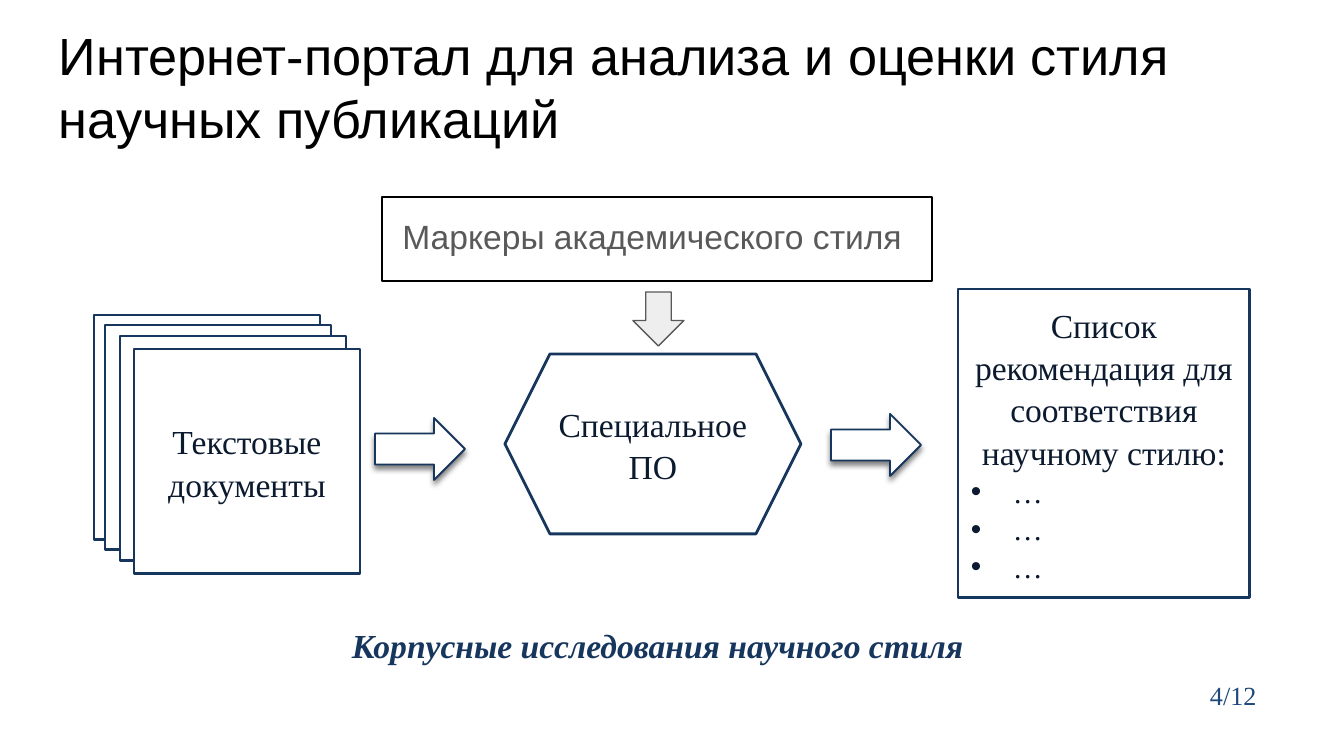
"""Build the slide about a portal that rates the style of research papers."""
import dataclasses

import lxml.etree
import pptx
import pptx.dml.color
import pptx.enum.shapes
import pptx.enum.text
import pptx.oxml.ns
import pptx.util

SCALE = 914400 / 134.4
KIND = pptx.enum.shapes.MSO_SHAPE
ALIGN = pptx.enum.text.PP_ALIGN
ANCHOR = pptx.enum.text.MSO_ANCHOR


@dataclasses.dataclass(frozen=True)
class Theme:
    sans: str = "Arial"
    serif: str = "Times New Roman"
    black: str = "000000"
    white: str = "FFFFFF"
    navy: str = "17365D"
    blue: str = "1F497D"
    ink: str = "0B1A2E"
    gray: str = "595959"
    pale: str = "EEEEEE"
    head: int = 28
    body: int = 18
    item: int = 16
    note: int = 14


THEME = Theme()


def px(*sizes):
    return [pptx.util.Emu(round(size * SCALE)) for size in sizes]


def paint(color, code):
    color.rgb = pptx.dml.color.RGBColor.from_string(code)


def add_node(parent, tag, **attrs):
    return lxml.etree.SubElement(parent, pptx.oxml.ns.qn(tag), attrs)


def set_frame(frame, anchor, inset):
    frame.word_wrap = True
    frame.auto_size = pptx.enum.text.MSO_AUTO_SIZE.NONE
    frame.vertical_anchor = anchor
    frame.margin_left, frame.margin_right = px(13, 13)
    frame.margin_top, frame.margin_bottom = px(inset, inset)


def write(frame, lines, size, face, code, align=ALIGN.LEFT, space=None, bold=None):
    """Add each line as a paragraph, filling an empty first one."""
    paras = []
    for line in lines:
        first = frame.paragraphs[0]
        para = frame.add_paragraph() if first.runs else first
        para.alignment = align
        para.line_spacing = space
        run = para.add_run()
        run.text = line
        run.font.size = pptx.util.Pt(size)
        run.font.name = face
        run.font.bold = run.font.italic = bold
        paint(run.font.color, code)
        paras.append(para)
    return paras


def add_dot(para, code):
    props = para._p.get_or_add_pPr()
    dent = px(42)[0]
    props.set("marL", str(dent))
    props.set("indent", str(-dent))
    add_node(add_node(props, "a:buClr"), "a:srgbClr", val=code)
    add_node(props, "a:buFont", typeface=THEME.sans)
    add_node(props, "a:buChar", char="•")


def add_form(slide, kind, box, fill=THEME.white, line=THEME.navy, width=1.5):
    form = slide.shapes.add_shape(kind, *px(*box))
    form.shadow.inherit = False
    if fill:
        form.fill.solid()
        paint(form.fill.fore_color, fill)
    else:
        form.fill.background()
    paint(form.line.color, line)
    form.line.width = pptx.util.Pt(width)
    return form


def add_block(slide, kind, box, lines):
    form = add_form(slide, kind, box)
    set_frame(form.text_frame, ANCHOR.MIDDLE, 7)
    write(form.text_frame, lines, THEME.body, THEME.serif, THEME.ink, ALIGN.CENTER, 1.05)
    return form


def add_arrow(slide, left, top):
    form = add_form(slide, KIND.RIGHT_ARROW, (left, top, 90, 62), width=1)
    effects = form._element.spPr.find(pptx.oxml.ns.qn("a:effectLst"))
    shade = add_node(effects, "a:outerShdw", blurRad="38100", dist="25400",
                     dir="5400000", rotWithShape="0")
    color = add_node(shade, "a:srgbClr", val=THEME.black)
    add_node(color, "a:alpha", val="50000")


def add_label(slide, box, text, size, code, bold=None):
    frame = slide.shapes.add_textbox(*px(*box)).text_frame
    set_frame(frame, ANCHOR.TOP, 7)
    write(frame, [text], size, THEME.serif, code, bold=bold)


def add_title(slide, text):
    title = slide.shapes.title
    title.left, title.top, title.width, title.height = px(46, 10, 1252, 84)
    set_frame(title.text_frame, ANCHOR.TOP, 13)
    write(title.text_frame, [text], THEME.head, THEME.sans, THEME.black)


def add_marks(slide):
    form = add_form(slide, KIND.RECTANGLE, (382, 197, 550, 84), None, THEME.black, 0.75)
    set_frame(form.text_frame, ANCHOR.TOP, 13)
    para = write(form.text_frame, ["Маркеры академического стиля "], THEME.body,
                 THEME.sans, THEME.gray, ALIGN.CENTER, 1.15)[0]
    para.space_after = pptx.util.Pt(16)


def add_stack(slide):
    for left, top in ((94, 315), (105, 325), (120, 336)):
        add_form(slide, KIND.RECTANGLE, (left, top, 226, 225))
    add_block(slide, KIND.RECTANGLE, (134, 349, 226, 225), ["Текстовые", "документы"])


def add_list(slide):
    form = add_block(slide, KIND.RECTANGLE, (958, 289, 292, 309),
                     ["Список рекомендация для соответствия научному стилю:"])
    for para in write(form.text_frame, ["…"] * 3, THEME.item, THEME.serif,
                      THEME.ink, space=1.05):
        add_dot(para, THEME.ink)


def main():
    deck = pptx.Presentation()
    deck.slide_width, deck.slide_height = px(1344, 756)
    slide = deck.slides.add_slide(deck.slide_layouts[5])
    add_title(slide, "Интернет-портал для анализа и оценки стиля научных публикаций")
    add_marks(slide)
    add_label(slide, (1197, 672, 100, 54), "4/12", THEME.note, THEME.blue)
    tool = add_block(slide, KIND.HEXAGON, (505, 354, 296, 180), ["Специальное ПО"])
    tool.adjustments[0] = 0.25
    add_list(slide)
    add_stack(slide)
    add_arrow(slide, 375, 418)
    add_arrow(slide, 831, 414)
    add_label(slide, (339, 618, 645, 54), "Корпусные исследования научного стиля",
              THEME.body, THEME.navy, True)
    add_form(slide, KIND.DOWN_ARROW, (633, 292, 51, 54), THEME.pale, THEME.gray, 0.75)
    deck.save("out.pptx")


if __name__ == "__main__":
    main()
